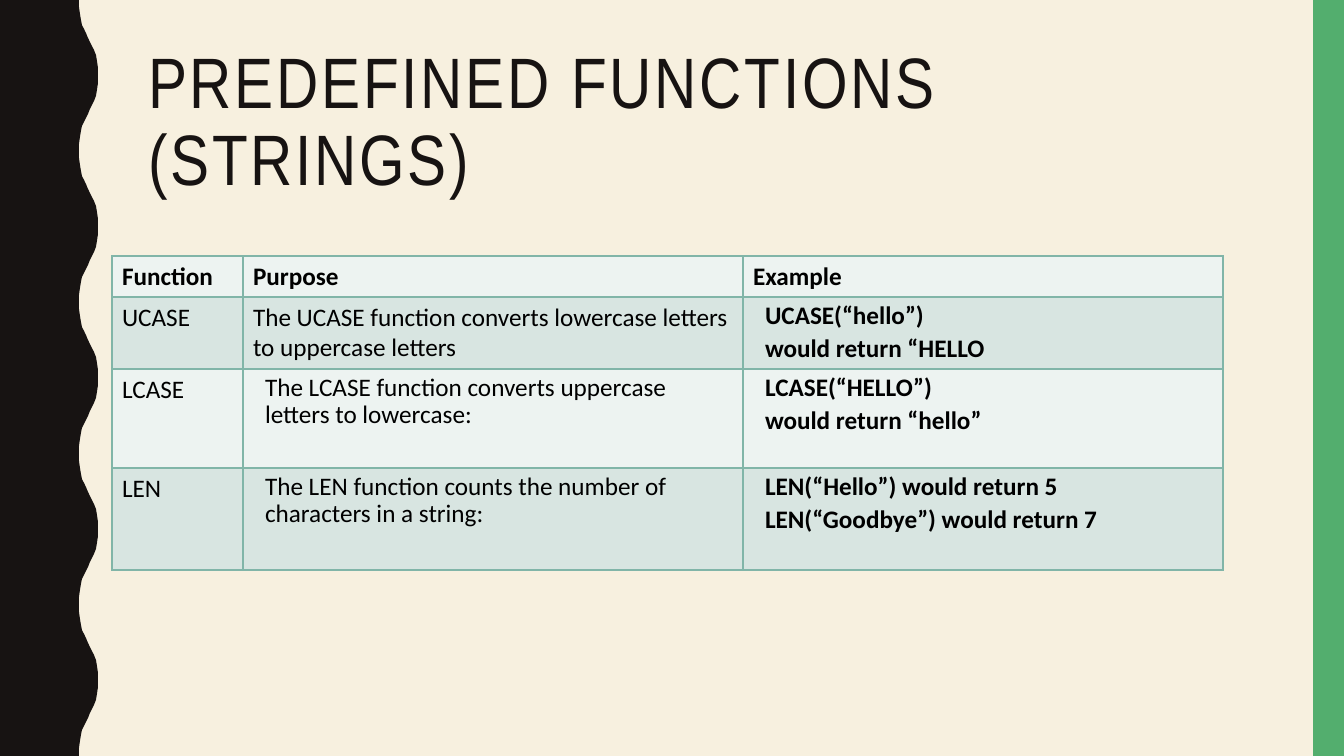
import dataclasses
import enum

import pptx
import pptx.dml.color
import pptx.enum.shapes
import pptx.enum.text
import pptx.oxml
import pptx.oxml.ns
import pptx.util

SCALE = 914400 / 100.8
SLIDE_W, SLIDE_H = 1344, 756
COLORS = {
    "paper": "F7F0DF",
    "ink": "171312",
    "accent": "53AE6E",
    "text": "000000",
    "border": "81B5A8",
    "light": "EDF3F1",
    "dark": "D8E5E1",
}
WAVE_X = [79, 79, 80, 81, 82, 84, 86, 88, 90, 92, 94, 96, 97, 98, 98]
WAVE_Y = [0, 7, 14, 20, 25, 29, 33, 38, 42, 46, 50, 55, 61, 68, 75]
HALF_WAVES = 10
COLUMN_WIDTHS = [131, 500, 480]


class Style(enum.Enum):
    PLAIN = (0, 0)
    BLOCK = (12, 0)
    HANGING = (40, -28)


@dataclasses.dataclass(frozen=True)
class CellText:
    lines: tuple[str, ...]
    style: Style = Style.PLAIN
    bold: bool = False


@dataclasses.dataclass(frozen=True)
class Row:
    height: int
    cells: tuple[CellText, ...]


def example(*lines: str) -> CellText:
    return CellText(lines, Style.HANGING, True)


ROWS = [
    Row(41, tuple(CellText((name,), bold=True) for name in ("Function", "Purpose", "Example"))),
    Row(72, (
        CellText(("UCASE",)),
        CellText(("The UCASE function converts lowercase letters to uppercase letters",)),
        example("UCASE(“hello”)", "would return “HELLO"),
    )),
    Row(99, (
        CellText(("LCASE",)),
        CellText(("The LCASE function converts uppercase letters to lowercase:",), Style.BLOCK),
        example("LCASE(“HELLO”)", "would return “hello”"),
    )),
    Row(102, (
        CellText(("LEN",)),
        CellText(("The LEN function counts the number of characters in a string:",), Style.BLOCK),
        example("LEN(“Hello”) would return 5", "LEN(“Goodbye”) would return 7"),
    )),
]


def px(n: int) -> pptx.util.Emu:
    return pptx.util.Emu(round(n * SCALE))


def rgb(name: str) -> pptx.dml.color.RGBColor:
    return pptx.dml.color.RGBColor.from_string(COLORS[name])


def paint(sp, color: str) -> None:
    sp.shadow.inherit = False
    sp.fill.solid()
    sp.fill.fore_color.rgb = rgb(color)
    sp.line.fill.background()


def format_run(r, font: str, size: int, color: str, bold: bool) -> None:
    r.font.name = font
    r.font.size = pptx.util.Pt(size)
    r.font.color.rgb = rgb(color)
    r.font.bold = bold


def draw_wave(slide) -> None:
    edge = []
    for i in range(HALF_WAVES):
        top = i * SLIDE_H / HALF_WAVES
        xs = WAVE_X if i % 2 == 0 else WAVE_X[::-1]
        edge += [(x, top + y) for x, y in zip(xs, WAVE_Y)]
    fb = slide.shapes.build_freeform(0, 0, scale=SCALE)
    fb.add_line_segments(edge + [(WAVE_X[0], SLIDE_H), (0, SLIDE_H)], close=True)
    paint(fb.convert_to_shape(), "ink")


def draw_band(slide) -> None:
    rect = pptx.enum.shapes.MSO_SHAPE.RECTANGLE
    paint(slide.shapes.add_shape(rect, px(1313), 0, px(31), px(SLIDE_H)), "accent")


def write_title(slide, text: str) -> None:
    sp = slide.shapes.title
    sp.left, sp.top, sp.width, sp.height = px(138), px(42), px(1122), px(164)
    tf = sp.text_frame
    tf.word_wrap = True
    tf.auto_size = pptx.enum.text.MSO_AUTO_SIZE.NONE
    tf.vertical_anchor = pptx.enum.text.MSO_ANCHOR.MIDDLE
    p = tf.paragraphs[0]
    p.alignment = pptx.enum.text.PP_ALIGN.LEFT
    p.line_spacing = 0.9
    r = p.add_run()
    r.text = text
    format_run(r, "Arial Narrow", 51, "ink", False)
    r.font._element.set("spc", "200")


def set_borders(cell) -> None:
    tc_pr = cell._tc.get_or_add_tcPr()
    for i, side in enumerate("LRTB"):
        tc_pr.insert(i, pptx.oxml.parse_xml(
            f'<a:ln{side} {pptx.oxml.ns.nsdecls("a")} w="12700"><a:solidFill>'
            f'<a:srgbClr val="{COLORS["border"]}"/></a:solidFill></a:ln{side}>'
        ))


def fill_cell(cell, content: CellText, color: str) -> None:
    cell.fill.solid()
    cell.fill.fore_color.rgb = rgb(color)
    set_borders(cell)
    tf = cell.text_frame
    for i, line in enumerate(content.lines):
        p = tf.add_paragraph() if i else tf.paragraphs[0]
        if content.style is not Style.PLAIN:
            margin, indent = content.style.value
            p_pr = p._p.get_or_add_pPr()
            p_pr.set("marL", str(px(margin)))
            p_pr.set("indent", str(px(indent)))
            p.line_spacing = 0.9
            p.space_before = pptx.util.Pt(4)
        r = p.add_run()
        r.text = line
        format_run(r, "Calibri", 18, "text", content.bold)


def draw_table(slide) -> None:
    height = sum(row.height for row in ROWS)
    frame = slide.shapes.add_table(
        len(ROWS), len(COLUMN_WIDTHS), px(112), px(256), px(sum(COLUMN_WIDTHS)), px(height)
    )
    table = frame.table
    table.first_row = table.horz_banding = False
    for column, width in zip(table.columns, COLUMN_WIDTHS):
        column.width = px(width)
    for i, row in enumerate(ROWS):
        table.rows[i].height = px(row.height)
        for j, content in enumerate(row.cells):
            fill_cell(table.cell(i, j), content, "dark" if i % 2 else "light")


def main() -> None:
    prs = pptx.Presentation()
    prs.slide_width, prs.slide_height = px(SLIDE_W), px(SLIDE_H)
    slide = prs.slides.add_slide(prs.slide_layouts.get_by_name("Title Only"))
    slide.background.fill.solid()
    slide.background.fill.fore_color.rgb = rgb("paper")
    draw_wave(slide)
    draw_band(slide)
    write_title(slide, "PREDEFINED FUNCTIONS (STRINGS)")
    draw_table(slide)
    prs.save("out.pptx")


if __name__ == "__main__":
    main()
